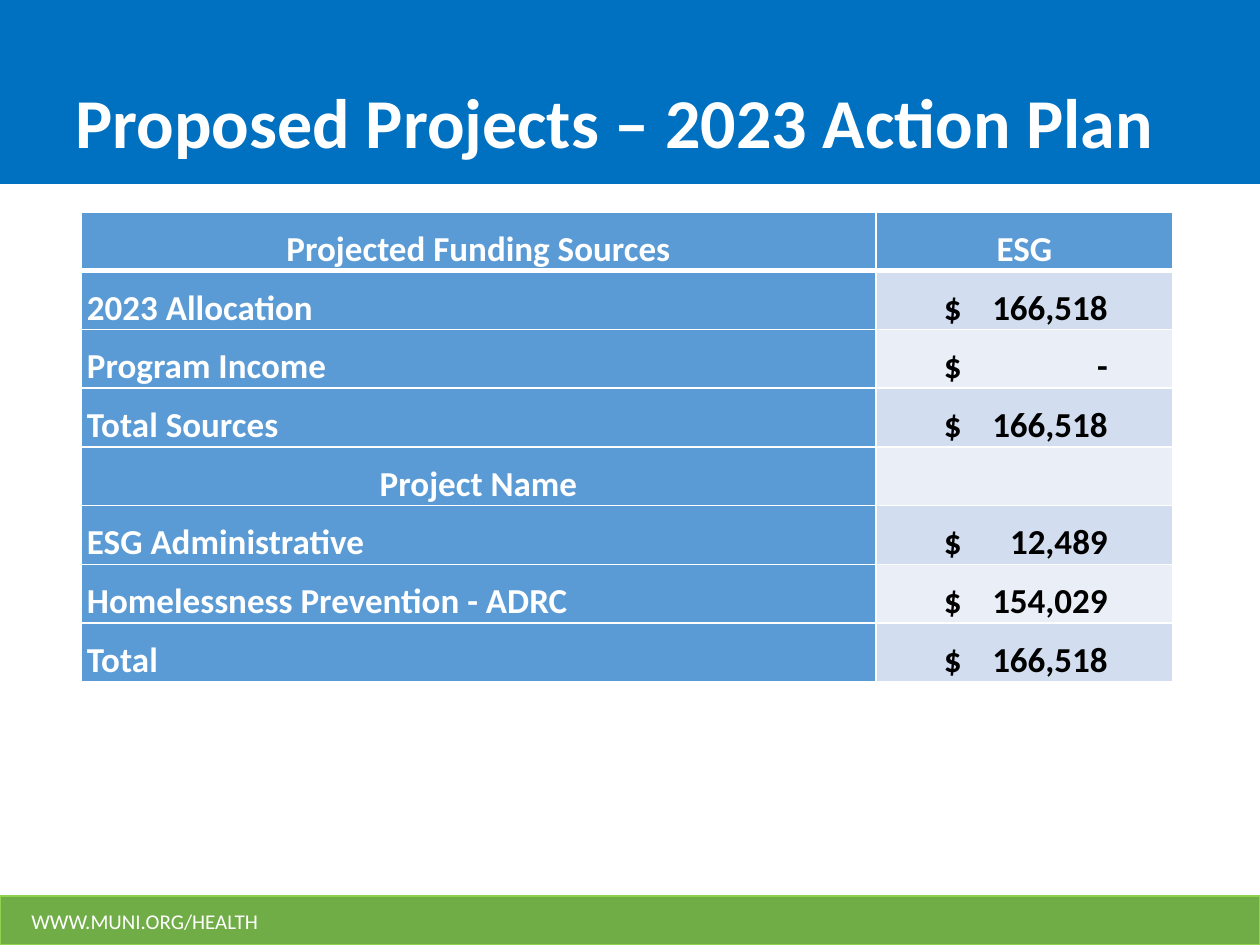
"""Build the slide of proposed projects in the 2023 action plan."""
from lxml.etree import SubElement
from pptx import Presentation
from pptx.dml.color import RGBColor
from pptx.enum.shapes import MSO_SHAPE as Shape
from pptx.enum.text import MSO_ANCHOR as Anchor, MSO_AUTO_SIZE as AutoSize, PP_ALIGN as Align
from pptx.oxml.ns import qn
from pptx.util import Emu, Pt

TITLE = "Proposed Projects – 2023 Action Plan"
FOOTER = "WWW.MUNI.ORG/HEALTH"
HEADER = ("Projected Funding Sources", "ESG")
SECTION = "Project Name"
ROWS = [
    HEADER,
    ("2023 Allocation", "166,518"),
    ("Program Income", "-"),
    ("Total Sources", "166,518"),
    (SECTION, ""),
    ("ESG Administrative", "12,489"),
    ("Homelessness Prevention - ADRC", "154,029"),
    ("Total", "166,518"),
]
WHITE, BLACK, BLUE, GREEN, LIME = "FFFFFF", "000000", "0070C0", "70AD47", "92D050"
LABEL_FILL, BANDS = "5B9BD5", ("EAEFF7", "D2DEEF")
COLUMNS = (795, 297)
TABLE_HEIGHT = 470
CELL_INSET, AMOUNT_INSET, AMOUNT_TAB = 6, 68, 164


def px(length):
    return Emu(round(length * 914400 / 126))


def color(code):
    return RGBColor.from_string(code)


def write(frame, text, size=20, ink=WHITE, bold=True, align=Align.LEFT, anchor=Anchor.BOTTOM):
    frame.vertical_anchor = anchor
    para = frame.paragraphs[0]
    para.alignment = align
    para.font.size = Pt(size)
    if text:
        span = para.add_run()
        span.text = text
        span.font.name = "Calibri"
        span.font.size = Pt(size)
        span.font.bold = bold
        span.font.color.rgb = color(ink)
    return para


def add_band(slide, top, height, fill, line=None):
    band = slide.shapes.add_shape(Shape.RECTANGLE, 0, px(top), px(1260), px(height))
    band.shadow.inherit = False
    band.fill.solid()
    band.fill.fore_color.rgb = color(fill)
    if line:
        band.line.color.rgb = color(line)
        band.line.width = Pt(1)
    else:
        band.line.fill.background()


def add_right_tab(para, position):
    tabs = SubElement(para._p.get_or_add_pPr(), qn("a:tabLst"))
    SubElement(tabs, qn("a:tab"), pos=str(px(position)), algn="r")


def style_cell(cell, fill, widths):
    properties = cell._tc.get_or_add_tcPr()
    for side, width in zip("LRTB", widths):
        line = SubElement(properties, qn(f"a:ln{side}"), w=str(Pt(width)))
        SubElement(SubElement(line, qn("a:solidFill")), qn("a:srgbClr"), val=WHITE)
    cell.fill.solid()
    cell.fill.fore_color.rgb = color(fill)
    cell.margin_left = cell.margin_right = px(CELL_INSET)
    cell.margin_top = cell.margin_bottom = 0
    cell.vertical_anchor = Anchor.BOTTOM


def add_funding_table(slide):
    table = slide.shapes.add_table(
        len(ROWS), len(COLUMNS), px(81), px(212), px(sum(COLUMNS)), px(TABLE_HEIGHT)
    ).table
    for column, width in zip(table.columns, COLUMNS):
        column.width = px(width)
    for index, (label, amount) in enumerate(ROWS):
        table.rows[index].height = px(TABLE_HEIGHT / len(ROWS))
        is_header = index == 0
        widths = (1, 1, 3 if index == 1 else 1, 3 if is_header else 1)
        label_cell, amount_cell = table.cell(index, 0), table.cell(index, 1)
        style_cell(label_cell, LABEL_FILL, widths)
        style_cell(amount_cell, LABEL_FILL if is_header else BANDS[index % 2], widths)
        centred = label in (HEADER[0], SECTION)
        write(label_cell.text_frame, label, align=Align.CENTER if centred else Align.LEFT)
        if is_header:
            write(amount_cell.text_frame, amount, align=Align.CENTER)
        else:
            amount_cell.margin_left = px(AMOUNT_INSET)
            text = f"$\t{amount}" if amount else ""
            para = write(amount_cell.text_frame, text, ink=BLACK)
            if amount:
                add_right_tab(para, AMOUNT_TAB)


def main():
    deck = Presentation()
    deck.slide_width, deck.slide_height = px(1260), px(945)
    slide = deck.slides.add_slide(deck.slide_layouts[5])
    add_band(slide, 0, 184, BLUE)
    add_band(slide, 896, 49, GREEN, LIME)

    footer = slide.shapes.add_textbox(px(19), px(898), px(339), px(47))
    footer.text_frame.word_wrap = True
    write(footer.text_frame, FOOTER, size=12, bold=False, anchor=Anchor.MIDDLE)

    title = slide.shapes.title
    title.left, title.top, title.width, title.height = px(63), px(0), px(1110), px(169)
    title.text_frame.auto_size = AutoSize.NONE
    write(title.text_frame, TITLE, size=40)
    slide.shapes.element.append(title.element)

    add_funding_table(slide)
    deck.save("out.pptx")


if __name__ == "__main__":
    main()
